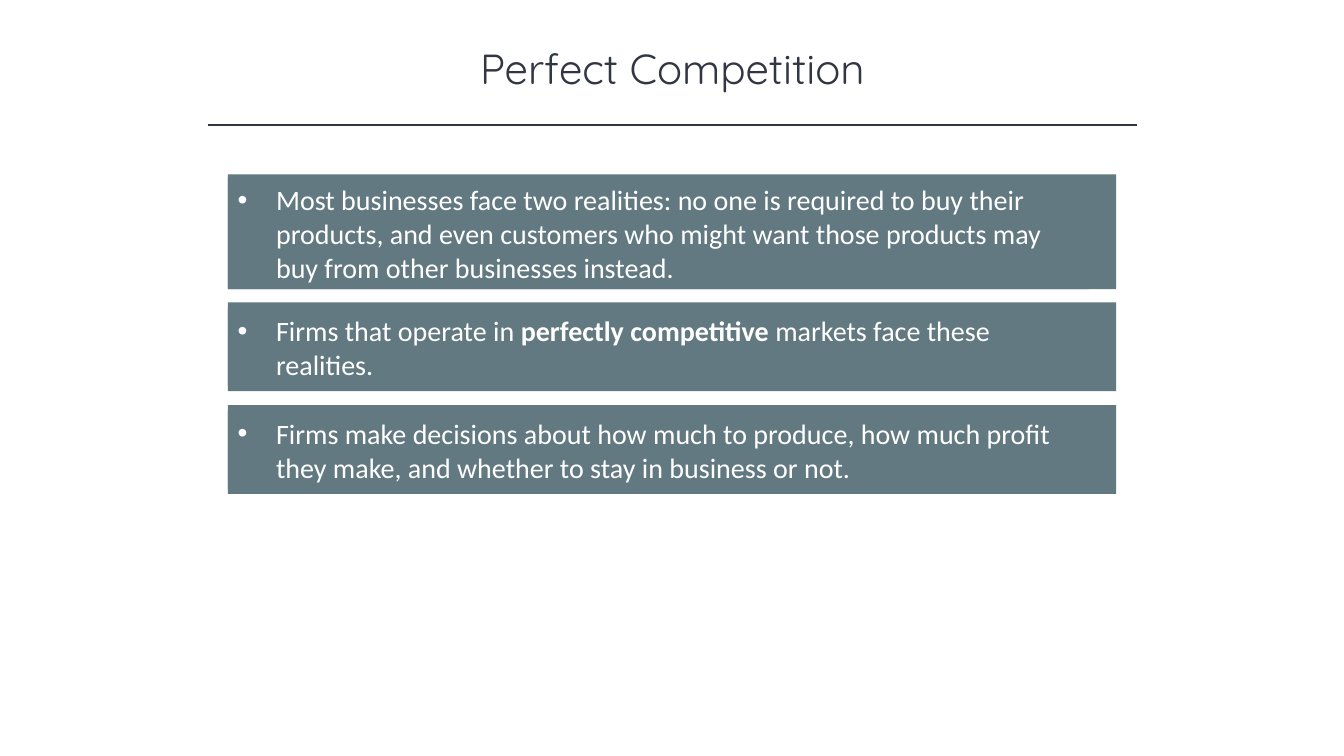
from lxml import etree
from pptx import Presentation
from pptx import util as u
from pptx.dml.color import RGBColor
from pptx.enum import shapes, text
from pptx.oxml.ns import qn

PX = 9144  # 100 px to the inch
INK = RGBColor(0x32, 0x35, 0x42)
SLATE = RGBColor(0x62, 0x79, 0x81)
WHITE = RGBColor(0xFF, 0xFF, 0xFF)


def add_block(parent, left, top, width, height):
    block = parent.shapes.add_shape(shapes.MSO_SHAPE.RECTANGLE,
                                    left * PX, top * PX, width * PX, height * PX)
    block.shadow.inherit = False
    block.fill.solid()
    block.fill.fore_color.rgb = SLATE
    block.line.fill.background()
    return block


deck = Presentation()
deck.slide_width, deck.slide_height = 1333 * PX, 750 * PX
slide = deck.slides.add_slide(deck.slide_layouts[6])

# Title
title = slide.shapes.add_textbox(167 * PX, 37 * PX, 1000 * PX, 61 * PX)
title.text_frame.word_wrap = True
heading = title.text_frame.paragraphs[0]
heading.text = "Perfect Competition"
heading.alignment = text.PP_ALIGN.CENTER
heading.font.name = "Quicksand"
heading.font.size = u.Pt(30)
heading.font.color.rgb = INK

# Rule under the title
rule = slide.shapes.add_connector(shapes.MSO_CONNECTOR.STRAIGHT,
                                  206 * PX, 124 * PX, 1128 * PX, 124 * PX)
rule.line.color.rgb = INK
rule.line.width = u.Pt(1)
etree.SubElement(rule._element.spPr, qn("a:effectLst"))

# Statements: bar top and height, text top and height, (wording, bold) runs
statements = [
    (173, 114, 176, 111, [
        ("Most businesses face two realities: no one is required to buy their products, "
         "and even customers who might want those products may buy from other "
         "businesses instead.", False)]),
    (300, 88, 306, 77, [
        ("Firms that operate in ", False),
        ("perfectly competitive ", True),
        ("markets face these realities.", False)]),
    (402, 88, 408, 77, [
        ("Firms make decisions about how much to produce, how much profit they make, "
         "and whether to stay in business or not.", False)]),
]
for bar_top, bar_height, text_top, text_height, runs in statements:
    statement = slide.shapes.add_group_shape()
    add_block(statement, 226, bar_top, 881, bar_height)
    wording = add_block(statement, 226, text_top, 854, text_height)
    wording.text_frame.word_wrap = True
    bullet = wording.text_frame.paragraphs[0]
    bullet.alignment = text.PP_ALIGN.LEFT
    bullet.font.name = "Calibri"
    bullet.font.size = u.Pt(20)
    bullet.font.color.rgb = WHITE
    for words, bold in runs:
        run = bullet.add_run()
        run.text = words
        if bold:
            run.font.bold = True

    # Hanging bullet, placed ahead of the paragraph's default font
    properties = bullet._p.get_or_add_pPr()
    properties.set("marL", str(38 * PX))
    properties.set("indent", str(-38 * PX))
    marker_font = etree.Element(qn("a:buFont"), typeface="Arial")
    marker = etree.Element(qn("a:buChar"), char="•")
    properties.insert(0, marker_font)
    properties.insert(1, marker)

deck.save("out.pptx")
